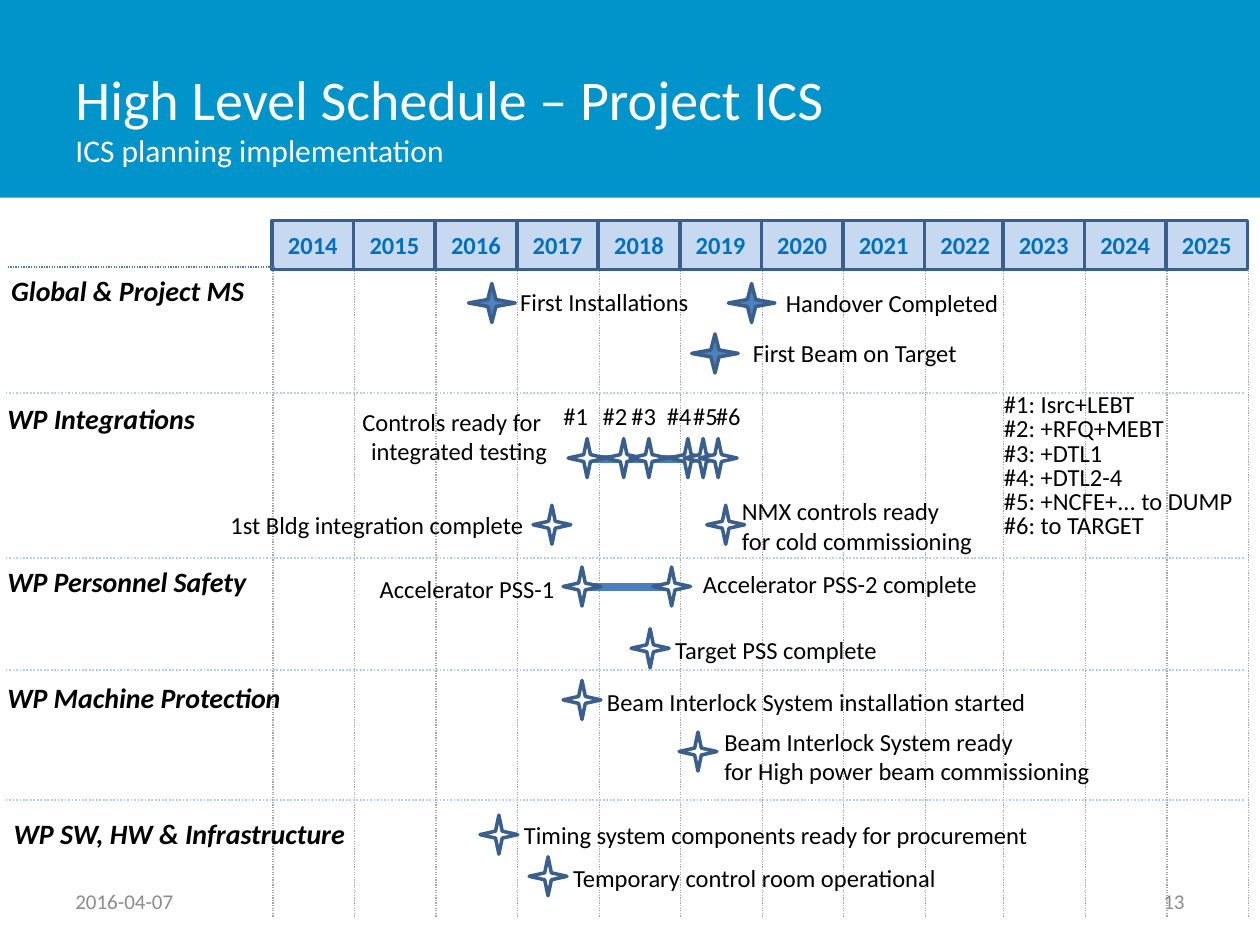
from lxml import etree
from pptx import Presentation
from pptx import util as u
from pptx.dml.color import RGBColor
from pptx.enum import dml, shapes, text
from pptx.oxml.ns import qn

BANNER = RGBColor(0x00, 0x94, 0xCA)
WHITE = RGBColor(0xFF, 0xFF, 0xFF)
BLACK = RGBColor(0, 0, 0)
FOOTER_GREY = RGBColor(0x8C, 0x8C, 0x8C)
YEAR_FILL = RGBColor(0xC6, 0xD9, 0xF1)
YEAR_TEXT = RGBColor(0x00, 0x70, 0xC0)
OUTLINE = RGBColor(0x3A, 0x5F, 0x8C)
STAR_FILL = RGBColor(0x4F, 0x81, 0xBD)
BAR = RGBColor(0x4B, 0x7E, 0xBC)
GRID_GREY = RGBColor(0xA6, 0xA6, 0xA6)
DIVIDER = RGBColor(0xB9, 0xCD, 0xE5)

LEFT, CENTER, RIGHT = text.PP_ALIGN.LEFT, text.PP_ALIGN.CENTER, text.PP_ALIGN.RIGHT

# Content: all lengths in points
YEARS = range(2014, 2026)
YEAR_PITCH, YEAR_TOP, YEAR_HEIGHT = 46.6, 126, 28.1
GRID_BOTTOM = 524
DIVIDERS = [224.6, 319, 383, 457.2]
ROW_HEADS = [  # left, top, width, wording
    (-0.7, 152.6, 149.8, "Global & Project MS"),
    (-2.9, 226.1, 123.1, "WP Integrations"),
    (-2.9, 319, 153.4, "WP Personnel Safety"),
    (-2.9, 385.2, 172.8, "WP Machine Protection"),
    (0.7, 463, 206.6, "WP SW, HW & Infrastructure"),
]
BARS = [(329, 386.6, 335.5), (331.9, 389.5, 262.1)]  # from, to, height on slide
PROJECT_STARS = [(267.8, 162), (395.3, 190.8), (416.2, 162)]
PACKAGE_STARS = [
    (304.6, 288.7), (403.9, 288.7),
    (321.8, 324), (373, 324), (360.7, 359.3),
    (321.8, 388.8), (388.1, 418.3),
    (274.3, 465.8), (302.4, 489.6),
]
INTEGRATION_TOP, LABEL_TOP = 250.6, 225.4
INTEGRATIONS = [  # star left, label left, scope
    (324.7, 314.6, "Isrc+LEBT"),
    (345.6, 337, "+RFQ+MEBT"),
    (360, 353.5, "+DTL1"),
    (382.3, 373.7, "+DTL2-4"),
    (391, 388.8, "+NCFE+... to DUMP"),
    (399.6, 401.8, "to TARGET"),
]
LEGEND_LEFT, LEGEND_TOP, LEGEND_PITCH = 566.6, 218.9, 13.85
LABELS = [  # left, top, width, alignment, lines
    (290.2, 160.6, 115.2, LEFT, ["First Installations"]),
    (422.6, 189.4, 131.8, CENTER, ["First Beam on Target"]),
    (441.4, 161.3, 136.8, CENTER, ["Handover Completed"]),
    (198.7, 229, 121, RIGHT, ["Controls ready for ", "integrated testing"]),
    (124.6, 288, 183.6, LEFT, ["1st Bldg integration complete"]),
    (416.9, 280.1, 146.9, LEFT, ["NMX controls ready", "for cold commissioning"]),
    (208.8, 324.7, 115.2, RIGHT, ["Accelerator PSS-1"]),
    (394.6, 321.8, 172.1, LEFT, ["Accelerator PSS-2 complete"]),
    (378.7, 359.3, 131, LEFT, ["Target PSS complete"]),
    (339.8, 388.8, 256.3, LEFT, ["Beam Interlock System installation started"]),
    (406.8, 411.8, 224.6, LEFT,
     ["Beam Interlock System ready", "for High power beam commissioning"]),
    (292.3, 465.1, 304.6, LEFT, ["Timing system components ready for procurement"]),
    (320.4, 489.6, 228.2, LEFT, ["Temporary control room operational"]),
]

deck = Presentation()
deck.slide_width, deck.slide_height = u.Pt(720), u.Pt(540)
page = deck.slides.add_slide(deck.slide_layouts[6])


def style(para, size, color, align=LEFT, bold=False, italic=False):
    para.alignment = align
    font = para.font
    font.name, font.size, font.bold, font.italic = "Calibri", u.Pt(size), bold, italic
    font.color.rgb = color


def add_text(left, top, width, height, lines, size=14, color=BLACK, wrap=False,
             anchor=text.MSO_ANCHOR.TOP, **look):
    box = page.shapes.add_textbox(*map(u.Pt, (left, top, width, height)))
    frame = box.text_frame
    frame.word_wrap, frame.vertical_anchor = wrap, anchor
    frame.text = "\n".join(lines)
    for para in frame.paragraphs:
        style(para, size, color, **look)
    return frame


def add_preset(kind, left, top, width, height, fill, outline=None):
    shape = page.shapes.add_shape(kind, *map(u.Pt, (left, top, width, height)))
    shape.shadow.inherit = False
    shape.fill.solid()
    shape.fill.fore_color.rgb = fill
    if outline is None:
        shape.line.fill.background()
    else:
        shape.line.color.rgb = outline
        shape.line.width = u.Pt(2)
    return shape


def add_line(x1, y1, x2, y2, color, width, dotted=True):
    line = page.shapes.add_connector(shapes.MSO_CONNECTOR.STRAIGHT,
                                     *map(u.Pt, (x1, y1, x2, y2)))
    line.line.color.rgb = color
    line.line.width = u.Pt(width)
    if dotted:
        line.line.dash_style = dml.MSO_LINE.ROUND_DOT
    etree.SubElement(line._element.spPr, qn("a:effectLst"))


def add_star(left, top, width=21.6, fill=WHITE):
    add_preset(shapes.MSO_SHAPE.STAR_4_POINT, left, top, width, 22.3, fill, OUTLINE)


def year_left(index):
    # The columns from 2023 on sit slightly closer to the left
    return (155.5 if index < 9 else 153.7) + index * YEAR_PITCH


# Banner and title
add_preset(shapes.MSO_SHAPE.RECTANGLE, 0, 0, 720, 113, BANNER)
title = add_text(36, 21.6, 562.3, 90, ["High Level Schedule – Project ICS"], 32, WHITE,
                 wrap=True, anchor=text.MSO_ANCHOR.MIDDLE).paragraphs[0]
title.add_line_break()
subtitle = title.add_run()
subtitle.text = "ICS planning implementation"
subtitle.font.size = u.Pt(18)

# Year header and grid
for index, year in enumerate(YEARS):
    cell = add_preset(shapes.MSO_SHAPE.RECTANGLE, year_left(index), YEAR_TOP,
                      YEAR_PITCH, YEAR_HEIGHT, YEAR_FILL, OUTLINE)
    frame = cell.text_frame
    frame.margin_left = frame.margin_right = 0
    frame.text = str(year)
    style(frame.paragraphs[0], 14, YEAR_TEXT, CENTER, bold=True)
for index in range(len(YEARS) + 1):
    x = year_left(index) + 0.5
    add_line(x, YEAR_TOP + YEAR_HEIGHT + 0.5, x, GRID_BOTTOM, GRID_GREY, 0.75)
add_line(157, 152.6, 4.3, 152.6, BAR, 0.75)
for y in DIVIDERS:
    add_line(710.6, y, 2.9, y, DIVIDER, 1)

# Row heads
for left, top, width, wording in ROW_HEADS:
    add_text(left, top, width, 26.6, [wording], 16, bold=True, italic=True)

# Bars and milestone stars
for start, end, y in BARS:
    add_line(start, y, end, y, BAR, 4.5, dotted=False)
for left, top in PROJECT_STARS:
    add_star(left, top, 26.6, STAR_FILL)
for left, top in PACKAGE_STARS:
    add_star(left, top)

# Numbered integrations and their legend
for number, (star_left, label_left, scope) in enumerate(INTEGRATIONS, 1):
    add_star(star_left, INTEGRATION_TOP)
    add_text(label_left, LABEL_TOP, 28.8, 24.2, [f"#{number}"], align=CENTER)
    add_text(LEGEND_LEFT, LEGEND_TOP + (number - 1) * LEGEND_PITCH, 146, 24.2,
             [f"#{number}: {scope}"], wrap=True)

# Milestone labels
for left, top, width, align, lines in LABELS:
    add_text(left, top, width, 7.2 + 17 * len(lines), lines, align=align)

# Footer
for left, wording, align in [(36, "2016-04-07", LEFT), (516.2, "13", RIGHT)]:
    add_text(left, 500.4, 167.8, 28.8, [wording], 12, FOOTER_GREY, wrap=True,
             anchor=text.MSO_ANCHOR.MIDDLE, align=align)

deck.save("out.pptx")
